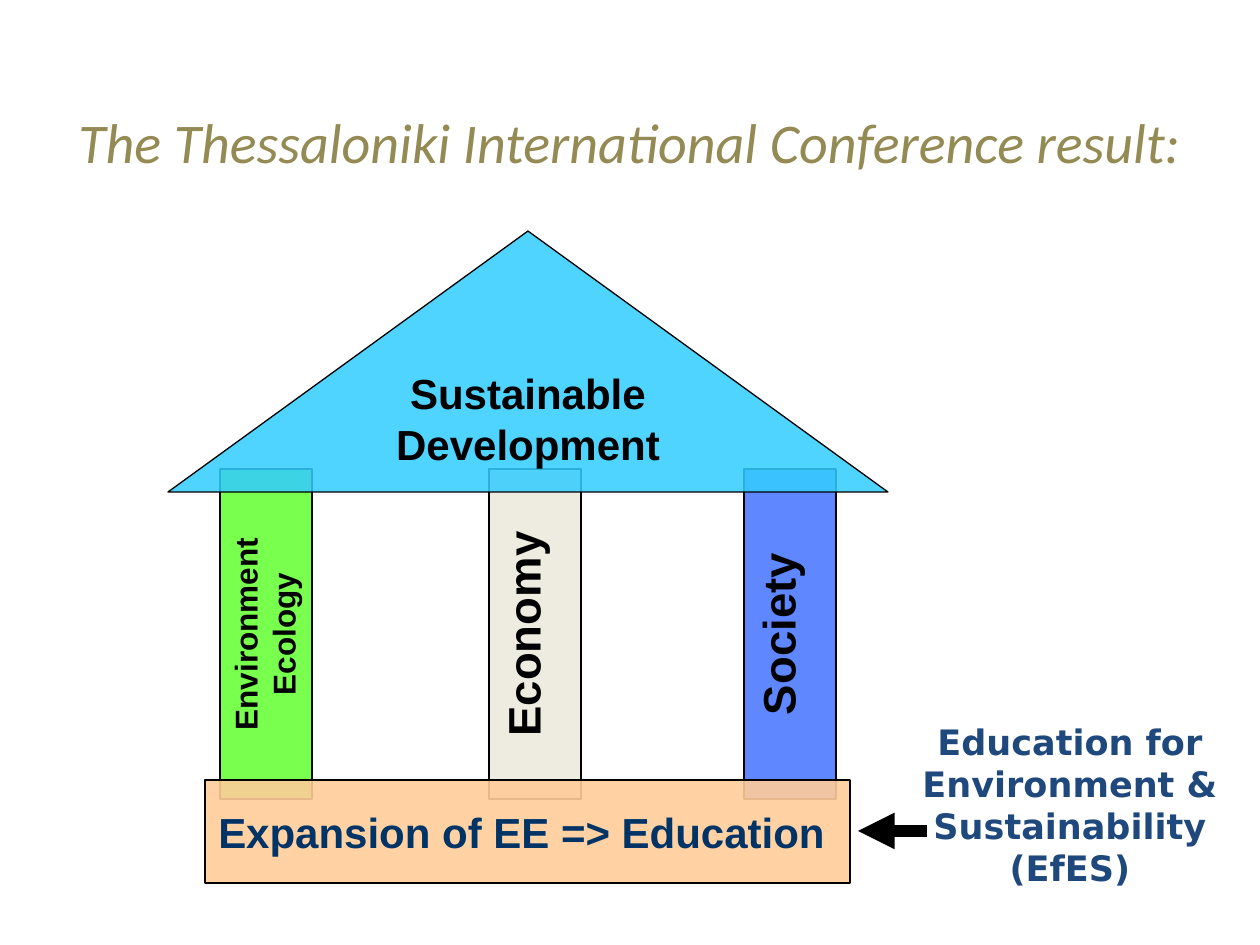
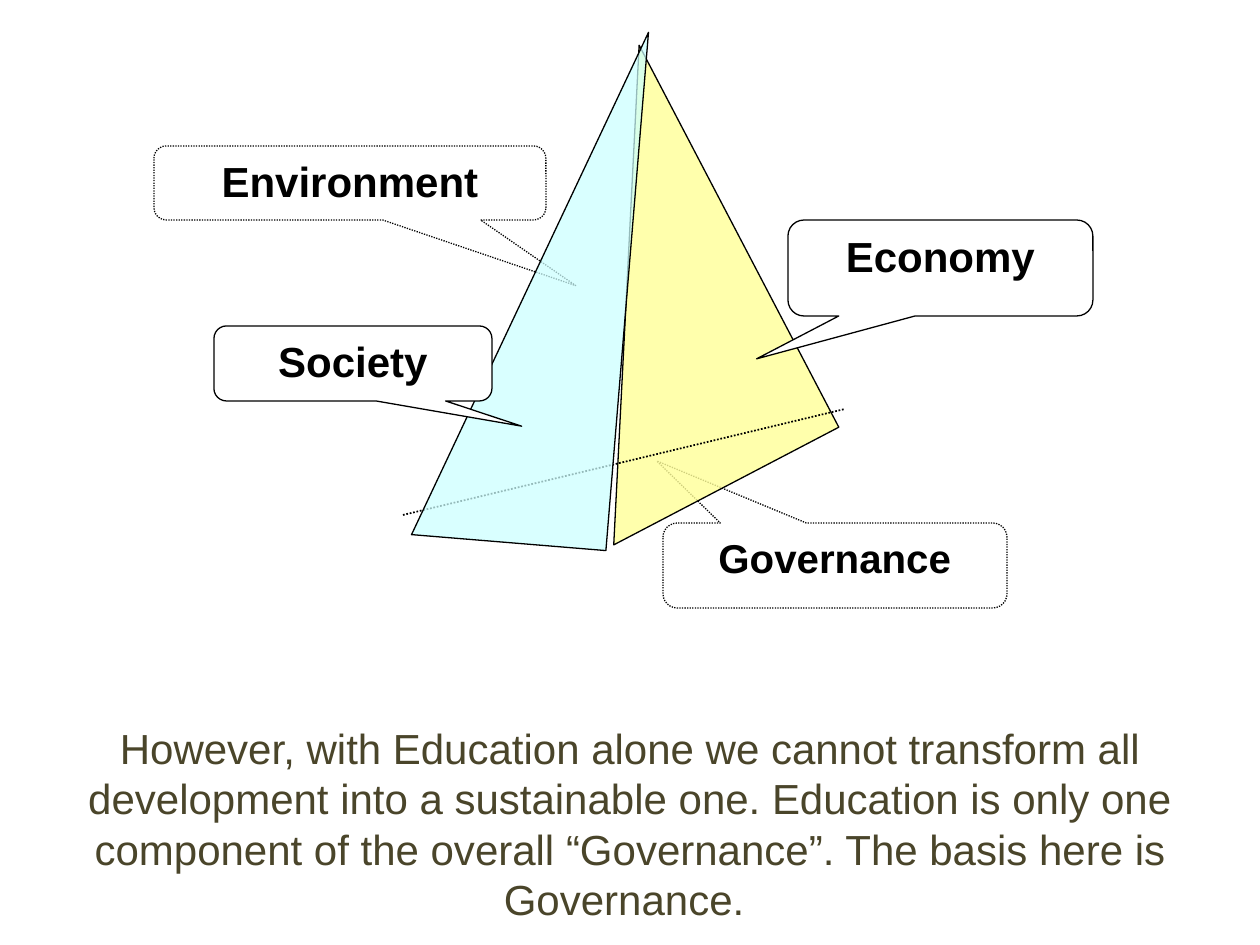
from dataclasses import dataclass
from typing import Optional
from lxml.etree import SubElement
from pptx import Presentation
from pptx.dml.color import RGBColor
from pptx.enum.dml import MSO_LINE as Dash
from pptx.enum.shapes import MSO_CONNECTOR as Link, MSO_SHAPE as Kind
from pptx.enum.text import MSO_ANCHOR as Anchor, MSO_AUTO_SIZE as Auto, PP_ALIGN as Align
from pptx.oxml.ns import qn
from pptx.util import Pt

SCALE = 914400 / 126
WIDE, HIGH = 1260, 945
BLACK, WHITE = "000000", "FFFFFF"
NAVY, BLUE, OLIVE, DARK = "003366", "1F497D", "948A54", "4A452A"
SANS = "Arial"


@dataclass
class Font:
    size: int
    color: str = BLACK
    name: str = SANS
    bold: bool = True
    italic: bool = False


@dataclass
class Part:
    kind: Kind
    box: tuple
    fill: Optional[str] = None
    text: str = ""
    font: Optional[Font] = None
    alpha: int = 100
    turn: float = 0
    adjust: tuple = ()
    dotted: bool = False
    anchor: Anchor = Anchor.TOP
    wrap: bool = True
    before: int = 0
    edge: bool = True


def px(count: float) -> int:
    return round(count * SCALE)


def rgb(code: str) -> RGBColor:
    return RGBColor.from_string(code)


def write(frame, text: str, font: Font, anchor=Anchor.TOP, wrap: bool = True, before: int = 0) -> None:
    frame.text = text
    frame.word_wrap = wrap
    frame.vertical_anchor = anchor
    para = frame.paragraphs[0]
    para.alignment = Align.CENTER
    if before:
        para.space_before = Pt(before)
    face = para.font
    face.size, face.name = Pt(font.size), font.name
    face.bold, face.italic = font.bold, font.italic
    face.color.rgb = rgb(font.color)


def draw(slide, part: Part) -> None:
    shape = slide.shapes.add_shape(part.kind, *map(px, part.box))
    shape.shadow.inherit = False
    shape.rotation = part.turn
    for spot, value in enumerate(part.adjust):
        shape.adjustments[spot] = value
    if part.fill:
        shape.fill.solid()
        shape.fill.fore_color.rgb = rgb(part.fill)
        if part.alpha < 100:
            tint = shape.fill._xPr.find(f".//{qn('a:srgbClr')}")
            SubElement(tint, qn("a:alpha"), val=str(part.alpha * 1000))
    else:
        shape.fill.background()
    if part.edge:
        shape.line.color.rgb = rgb(BLACK)
        shape.line.width = Pt(0.75)
        if part.dotted:
            shape.line.dash_style = Dash.ROUND_DOT
    else:
        shape.line.fill.background()
    if part.text:
        write(shape.text_frame, part.text, part.font, part.anchor, part.wrap, part.before)


def join(slide, start: tuple, end: tuple, width: int, dotted: bool = False, head: bool = False) -> None:
    wire = slide.shapes.add_connector(Link.STRAIGHT, *map(px, start + end))
    wire.line.color.rgb = rgb(BLACK)
    wire.line.width = Pt(width)
    if dotted:
        wire.line.dash_style = Dash.ROUND_DOT
    if head:
        SubElement(wire.line._get_or_add_ln(), qn("a:tailEnd"), type="triangle")
    SubElement(wire._element.spPr, qn("a:effectLst"))


def pillar(mid: int, fill: str, alpha: int, text: str, size: int) -> Part:
    long, thick, level = 330, 92, 634
    box = (mid - long / 2, level - thick / 2, long, thick)
    return Part(Kind.RECTANGLE, box, fill, text, Font(size), alpha, turn=270)


def callout(box: tuple, tip: tuple, text: str, size: int = 24, dotted: bool = False) -> Part:
    return Part(Kind.ROUNDED_RECTANGULAR_CALLOUT, box, WHITE, text, Font(size),
                adjust=(*tip, 0.167), dotted=dotted)


def face(box: tuple, fill: str, alpha: int, turn: float) -> Part:
    return Part(Kind.RIGHT_TRIANGLE, box, fill, alpha=alpha, turn=turn)


def temple(deck) -> None:
    slide = deck.slides.add_slide(deck.slide_layouts[5])
    parts = [
        pillar(266, "66FF33", 87, "Environment Ecology", 18),
        pillar(535, "EEECE1", 100, "Economy", 26),
        pillar(790, "3366FF", 78, "Society", 26),
        Part(Kind.ISOSCELES_TRIANGLE, (168, 231, 720, 261), "33CCFF",
             "Sustainable Development", Font(24), 86, before=5),
        Part(Kind.RECTANGLE, (205, 780, 645, 103), "FFCC99",
             "Expansion of EE => Education ", Font(24, NAVY), 90,
             anchor=Anchor.MIDDLE, wrap=False),
    ]
    for part in parts:
        draw(slide, part)
    note = slide.shapes.add_textbox(*map(px, (901, 714, 338, 180)))
    write(note.text_frame, "Education for Environment & Sustainability (EfES)",
          Font(20, BLUE, "DejaVu Sans"))
    note.text_frame.auto_size = Auto.SHAPE_TO_FIT_TEXT
    join(slide, (927, 831), (858, 831), 7, head=True)
    title = slide.shapes.title
    title.left, title.top, title.width, title.height = map(px, (0, 20, WIDE, 243))
    write(title.text_frame, "The Thessaloniki International Conference result:",
          Font(32, OLIVE, "Calibri", False, True), Anchor.MIDDLE)
    title.text_frame.auto_size = Auto.NONE


def pyramid(deck) -> None:
    slide = deck.slides.add_slide(deck.slide_layouts[6])
    back = [
        callout((663, 523, 344, 85), (-0.518, -1.23), "Governance", 23, True),
        callout((154, 146, 392, 74), (0.576, 1.387), "Environment", dotted=True),
        face((411, 168, 431, 254), "FFFF99", 81, 242.4),
    ]
    front = [
        face((270, 186, 520, 195), "CCFFFF", 73, 274.7),
        callout((214, 326, 278, 75), (0.607, 0.836), "Society"),
        callout((788, 220, 305, 96), (-0.603, 0.947), "Economy"),
        Part(Kind.ROUNDED_RECTANGLE, (0, 711, WIDE, 234),
             text="However, with Education alone we cannot transform all development into "
                  "a sustainable one. Education is only one component of the overall "
                  "“Governance”. The basis here is Governance. ",
             font=Font(24, DARK, bold=False), adjust=(0.217,), anchor=Anchor.BOTTOM, edge=False),
    ]
    for part in back:
        draw(slide, part)
    join(slide, (403, 515), (845, 409), 1, dotted=True)
    for part in front:
        draw(slide, part)


def main() -> None:
    deck = Presentation()
    deck.slide_width, deck.slide_height = px(WIDE), px(HIGH)
    temple(deck)
    pyramid(deck)
    deck.save("out.pptx")


if __name__ == "__main__":
    main()
